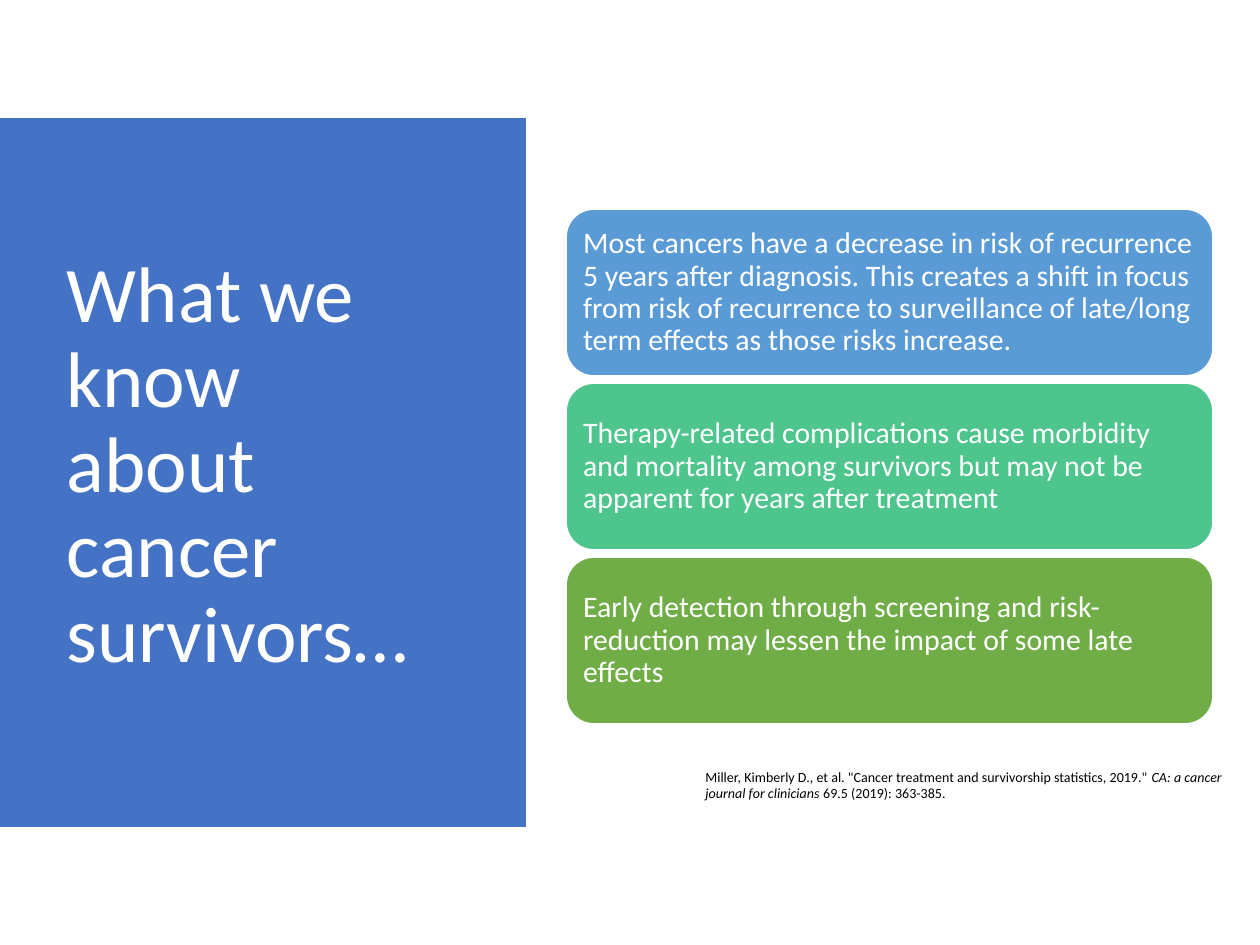
"""Build the slide on what is known about cancer survivors."""
from pptx import Presentation
from pptx.dml.color import RGBColor
from pptx.enum.shapes import MSO_SHAPE
from pptx.enum.text import MSO_ANCHOR, MSO_AUTO_SIZE, PP_ALIGN
from pptx.util import Pt

RECT, ROUND = MSO_SHAPE.RECTANGLE, MSO_SHAPE.ROUNDED_RECTANGLE
MIDDLE, TOP = MSO_ANCHOR.MIDDLE, MSO_ANCHOR.TOP
LEFT = PP_ALIGN.LEFT
FIXED, GROW = MSO_AUTO_SIZE.NONE, MSO_AUTO_SIZE.SHAPE_TO_FIT_TEXT

THEME = {
    "font": "Calibri", "panel": "4472C4", "light": "FFFFFF", "dark": "000000",
    "cards": ["5B9BD5", "4DC58D", "70AD47"],
    "title": 45, "body": 17, "cite": 8,
}
POINTS = [
    "Most cancers have a decrease in risk of recurrence 5 years after diagnosis. "
    "This creates a shift in focus from risk of recurrence to surveillance of "
    "late/long term effects as those risks increase.",
    "Therapy-related complications cause morbidity and mortality among survivors "
    "but may not be apparent for years after treatment ",
    "Early detection through screening and risk-reduction may lessen the impact "
    "of some late effects",
]
SOURCE = [
    ('Miller, Kimberly D., et al. "Cancer treatment and survivorship statistics, 2019." ', False),
    ("CA: a cancer journal for clinicians", True),
    (" 69.5 (2019): 363-385.", False),
]
SCALE = 914400 / 126


def px(*sizes):
    return [round(size * SCALE) for size in sizes]


def write(shape, runs, size, color, frame, lines):
    text = shape.text_frame
    for name, value in {"word_wrap": True, **frame}.items():
        setattr(text, name, value)
    para = text.paragraphs[0]
    para.alignment, para.line_spacing = LEFT, lines
    for words, slant in runs:
        run = para.add_run()
        run.text = words
        look = {"name": THEME["font"], "size": Pt(THEME[size]), "italic": slant}
        for name, value in look.items():
            setattr(run.font, name, value)
        run.font.color.rgb = RGBColor.from_string(THEME[color])


deck = Presentation()
deck.slide_width, deck.slide_height = px(1260, 945)
slide = deck.slides.add_slide(deck.slide_layouts[5])
shapes = slide.shapes

panel = shapes.add_shape(RECT, *px(0, 118, 526, 709))
panel.shadow.inherit = False
panel.fill.solid()
panel.fill.fore_color.rgb = RGBColor.from_string(THEME["panel"])
panel.line.fill.background()

title = shapes.title
title.left, title.top, title.width, title.height = px(54, 183, 393, 568)
panel.element.addnext(title.element)
write(title, [("What we know about cancer survivors…", False)], "title", "light",
      {"vertical_anchor": MIDDLE, "auto_size": FIXED}, 0.9)

inset = px(9)[0]
sides = {f"margin_{side}": inset for side in ("left", "top", "right", "bottom")}
for index, (point, color) in enumerate(zip(POINTS, THEME["cards"])):
    card = shapes.add_shape(ROUND, *px(566, 209 + 174 * index, 647, 167))
    card.shadow.inherit = False
    card.fill.solid()
    card.fill.fore_color.rgb = RGBColor.from_string(color)
    card.line.color.rgb = RGBColor.from_string(THEME["light"])
    card.line.width = Pt(1)
    write(card, [(point, False)], "body", "light",
          {"vertical_anchor": MIDDLE, **sides}, 0.9)

cite = shapes.add_textbox(*px(693, 762, 567, 47))
write(cite, SOURCE, "cite", "dark", {"vertical_anchor": TOP, "auto_size": GROW}, 1.0)

deck.save("out.pptx")
